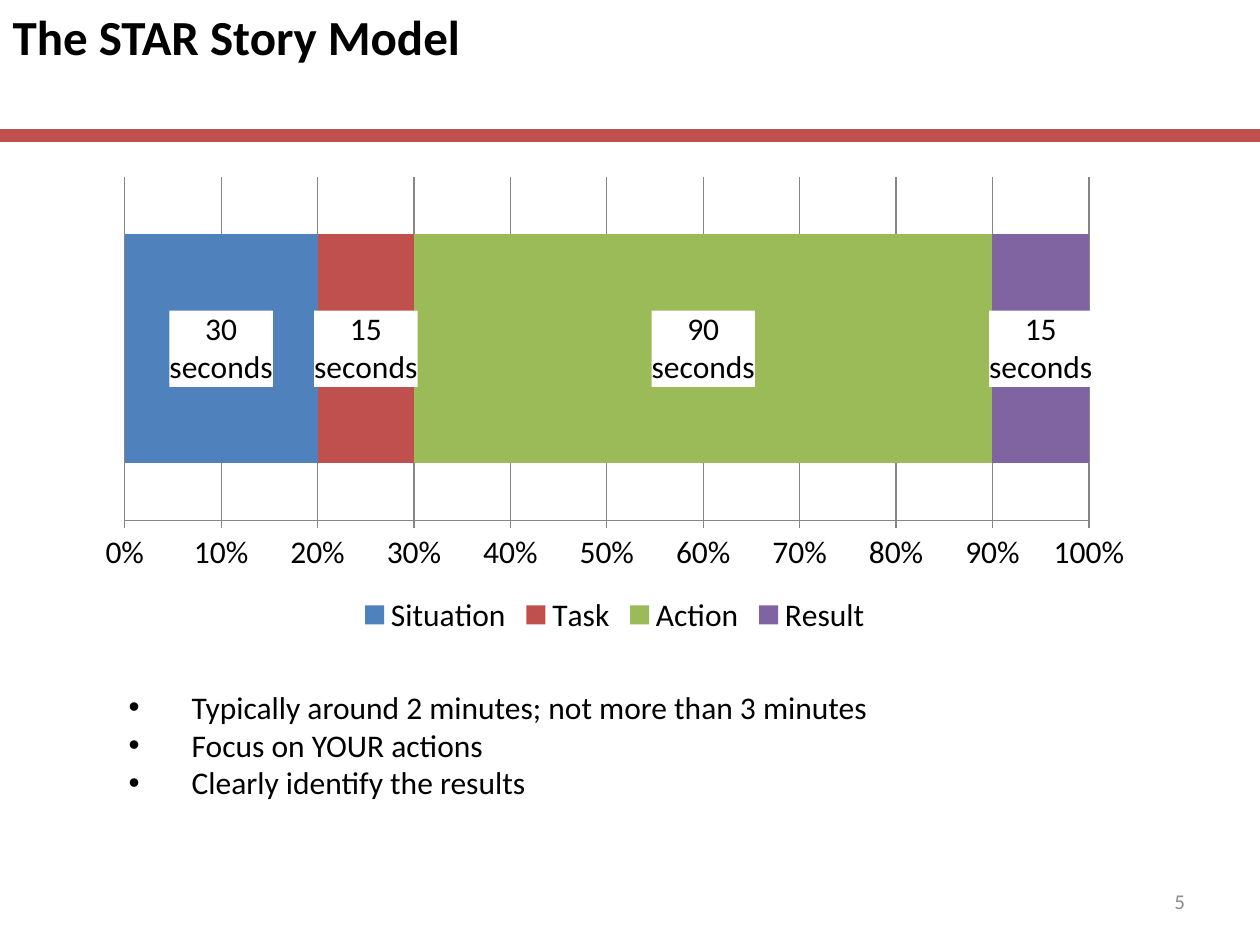
from typing import NamedTuple

from lxml.etree import SubElement as Sub
from pptx import Presentation as Deck
from pptx.chart.data import CategoryChartData as Data
from pptx.dml.color import RGBColor as Rgb
from pptx.enum.chart import XL_CHART_TYPE as Kind
from pptx.enum.chart import XL_LEGEND_POSITION as Spot
from pptx.enum.chart import XL_TICK_MARK as Tick
from pptx.enum.shapes import MSO_CONNECTOR as Link
from pptx.enum.text import MSO_ANCHOR as Anchor
from pptx.enum.text import MSO_AUTO_SIZE as Fit
from pptx.enum.text import PP_ALIGN as Align
from pptx.oxml import parse_xml
from pptx.oxml.ns import nsdecls, qn
from pptx.util import Cm, Pt

FONT = "Calibri"
INK = {
    "text": "000000",
    "page": "FFFFFF",
    "grid": "868686",
    "num": "8C8C8C",
    "blue": "4F81BD",
    "red": "C0504D",
    "green": "9BBB59",
    "plum": "8064A2",
}


class Box(NamedTuple):
    left: float
    top: float
    wide: float
    high: float


class Step(NamedTuple):
    name: str
    secs: int
    hue: str


STEPS = [
    Step("Situation", 30, "blue"),
    Step("Task", 15, "red"),
    Step("Action", 90, "green"),
    Step("Result", 15, "plum"),
]
TIPS = [
    "Typically around 2 minutes; not more than 3 minutes",
    "Focus on YOUR actions",
    "Clearly identify the results",
]


def ink(hue: str) -> Rgb:
    return Rgb.from_string(INK[hue])


def style(font, size: float, hue: str = "text", bold: bool = False) -> None:
    font.name, font.size, font.bold = FONT, Pt(size), bold
    font.color.rgb = ink(hue)


def place(shape, box: Box) -> None:
    shape.left, shape.top, shape.width, shape.height = map(Cm, box)


def write(shape, text: str, size: float, hue: str = "text",
          bold: bool = False, align=Align.LEFT, anchor=Anchor.TOP) -> None:
    frame = shape.text_frame
    frame.text = text
    frame.word_wrap = True
    frame.auto_size = Fit.NONE
    frame.vertical_anchor = anchor
    for para in frame.paragraphs:
        para.alignment = align
        para.space_before = Pt(0)
        for run in para.runs:
            style(run.font, size, hue, bold)


def bullet(para) -> None:
    props = para._p.get_or_add_pPr()
    props.set("marL", str(Cm(1.27)))
    props.set("indent", str(-Cm(1.27)))
    Sub(props, qn("a:buFont")).set("typeface", "Arial")
    Sub(props, qn("a:buChar")).set("char", "•")


def rule(slide, top: float, wide: float) -> None:
    line = slide.shapes.add_connector(
        Link.STRAIGHT, Cm(0), Cm(top), Cm(wide), Cm(top))
    line.line.color.rgb = ink("red")
    line.line.width = Pt(7.5)
    Sub(line._element.spPr, qn("a:effectLst"))


def tag(point, secs: int) -> None:
    label = point.data_label
    frame = label.text_frame
    frame.text = f"{secs}\nseconds"
    for para in frame.paragraphs:
        for run in para.runs:
            style(run.font, 18)
    fill = parse_xml(
        f'<c:spPr {nsdecls("c", "a")}><a:solidFill>'
        f'<a:srgbClr val="{INK["page"]}"/></a:solidFill></c:spPr>')
    label._dLbl.find(qn("c:tx")).addnext(fill)


def draw(slide, box: Box, steps: list[Step]) -> None:
    data = Data()
    data.categories = ["1"]
    for step in steps:
        data.add_series(step.name, [step.secs])
    chart = slide.shapes.add_chart(
        Kind.BAR_STACKED_100, *map(Cm, box), data).chart
    style(chart.font, 18)
    chart.has_title = False
    chart.has_legend = True
    chart.legend.position = Spot.BOTTOM
    chart.legend.include_in_layout = False
    chart.category_axis.visible = False
    axis = chart.value_axis
    axis.major_tick_mark = Tick.OUTSIDE
    axis.minor_tick_mark = Tick.NONE
    axis.has_major_gridlines = True
    axis.tick_labels.number_format = "0%"
    axis.tick_labels.number_format_is_linked = False
    for form in (axis.format, axis.major_gridlines.format):
        form.line.color.rgb = ink("grid")
        form.line.width = Pt(0.75)
    plot = chart.plots[0]
    plot.gap_width, plot.overlap = 50, 100
    plot.vary_by_categories = False
    for bar, step in zip(plot.series, steps):
        bar.format.fill.solid()
        bar.format.fill.fore_color.rgb = ink(step.hue)
        bar.data_labels.show_value = True
        tag(bar.points[0], step.secs)


def main() -> None:
    deck = Deck()
    deck.slide_width, deck.slide_height = Cm(25.4), Cm(19.05)
    slide = deck.slides.add_slide(deck.slide_layouts[1])
    rule(slide, 2.74, 25.4)
    draw(slide, Box(1.7, 3.38, 21.39, 9.53), STEPS)

    title, body = slide.placeholders
    place(title, Box(0, 0, 21.31, 2.54))
    write(title, "The STAR Story Model", 28, bold=True)
    place(body, Box(2.34, 13.74, 19.69, 2.57))
    write(body, "\n".join(TIPS), 18)
    for para in body.text_frame.paragraphs:
        bullet(para)

    num = slide.shapes.add_textbox(*map(Cm, Box(18.21, 17.65, 5.93, 1.02)))
    write(num, "5", 12, "num", align=Align.RIGHT, anchor=Anchor.MIDDLE)
    deck.save("out.pptx")


if __name__ == "__main__":
    main()
